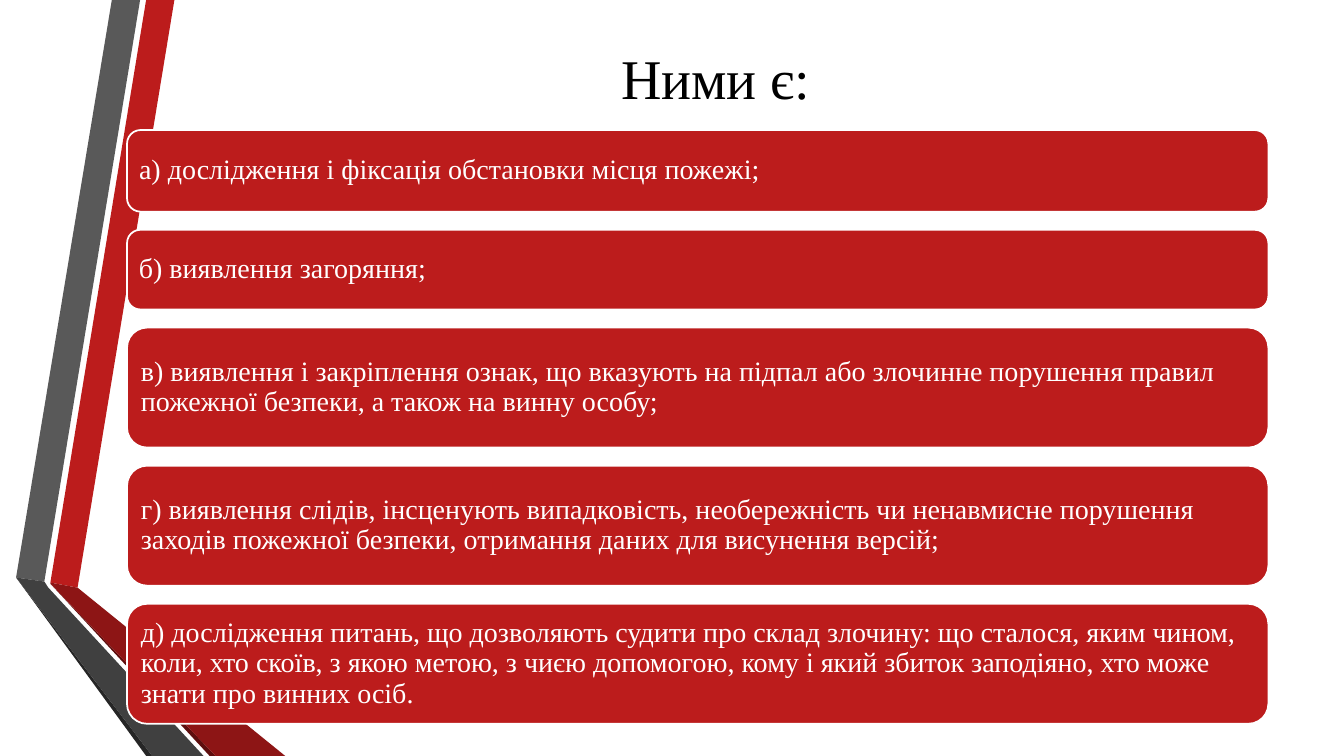
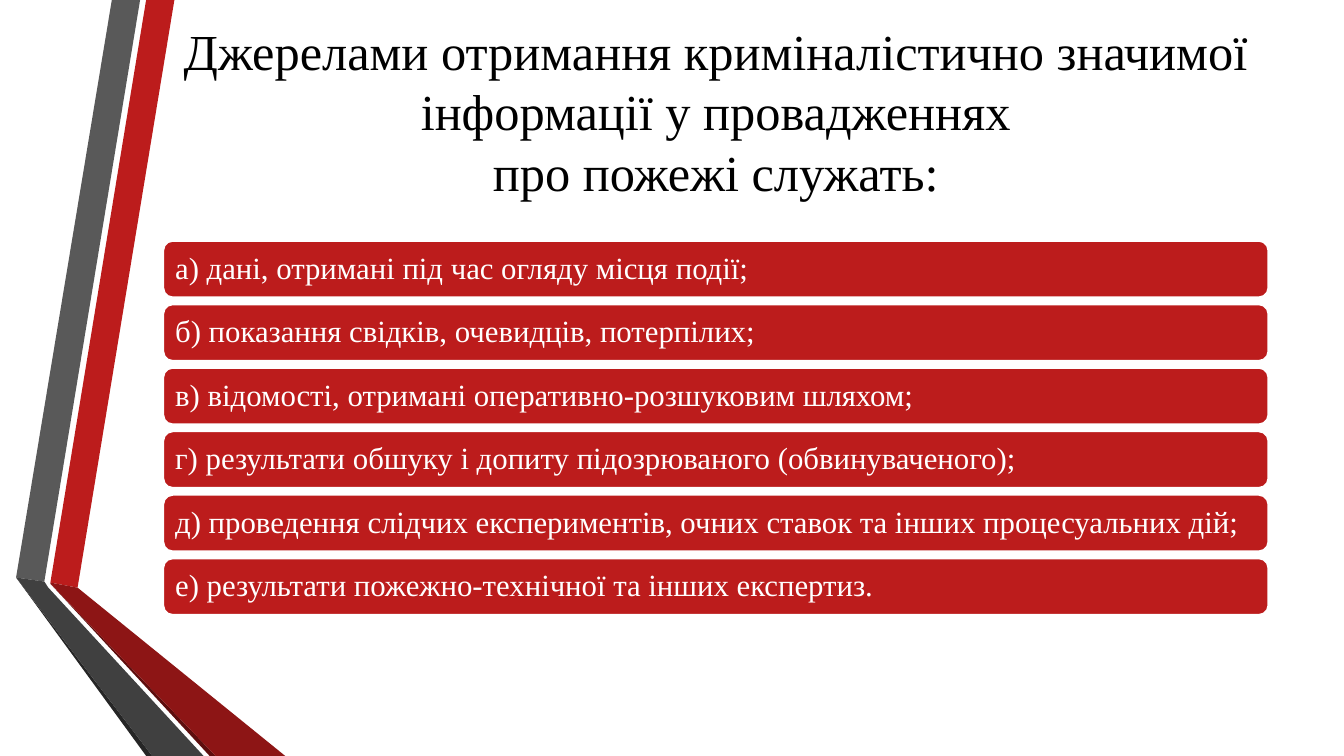
from pptx import Presentation
from pptx.dml.color import RGBColor
from pptx.enum.shapes import MSO_SHAPE as Preset
from pptx.enum.text import MSO_ANCHOR as Anchor, PP_ALIGN as Align
from pptx.util import Inches, Pt

FONT = "Times New Roman"
RED, WHITE, BLACK = "BC1C1C", "FFFFFF", "000000"
RIGHT_EDGE = 12.58
TITLE_LEFT = 1.62

RIBBONS = [
    (RED, [(0.5, 5.78), (0.77, 5.83), (1.73, 0), (1.45, 0)]),
    ("595959", [(1.39, 0), (1.11, 0), (0.16, 5.73), (0.44, 5.77)]),
    ("262626", [(0.16, 5.73), (1.45, 7.5), (1.51, 7.5)]),
    ("5E0E0E", [(0.5, 5.79), (2.08, 7.5), (2.14, 7.5)]),
    ("8D1515", [(0.5, 5.79), (2.14, 7.5), (2.83, 7.5), (0.77, 5.83), (0.5, 5.78)]),
    ("404040", [(2.02, 7.5), (0.48, 5.83), (0.44, 5.77), (0.16, 5.73), (1.51, 7.5)]),
]

SLIDES = [
    {
        "title": "Ними є:",
        "title_size": 40,
        "title_top": 0.14,
        "title_height": 1.25,
        "left": 1.26,
        "top": 1.29,
        "gap": 0.18,
        "size": 20,
        "inset": 0.08,
        "items": [
            ("а) дослідження і фіксація обстановки місця пожежі;", 0.81),
            ("б) виявлення загоряння;", 0.79),
            ("в) виявлення і закріплення ознак, що вказують на підпал або злочинне "
             "порушення правил пожежної безпеки, а також на винну особу;", 1.19),
            ("г) виявлення слідів, інсценують випадковість, необережність чи ненавмисне "
             "порушення заходів пожежної безпеки, отримання даних для висунення версій;", 1.19),
            ("д) дослідження питань, що дозволяють судити про склад злочину: що сталося, "
             "яким чином, коли, хто скоїв, з якою метою, з чиєю допомогою, кому і який "
             "збиток заподіяно, хто може знати про винних осіб.", 1.19),
        ],
    },
    {
        "title": "Джерелами отримання криміналістично значимої інформації у провадженнях\n"
                 "про пожежі служать:",
        "title_size": 36,
        "title_top": 0.17,
        "title_height": 1.85,
        "left": 1.62,
        "top": 2.39,
        "gap": 0.07,
        "size": 22,
        "inset": 0.09,
        "items": [
            ("а) дані, отримані під час огляду місця події;", 0.56),
            ("б) показання свідків, очевидців, потерпілих;", 0.56),
            ("в) відомості, отримані оперативно-розшуковим шляхом;", 0.56),
            ("г) результати обшуку і допиту підозрюваного (обвинуваченого);", 0.56),
            ("д) проведення слідчих експериментів, очних ставок та інших процесуальних дій;", 0.56),
            ("е) результати пожежно-технічної та інших експертиз.", 0.56),
        ],
    },
]


def color(hex_string):
    """Turn a hex string into a colour."""
    return RGBColor.from_string(hex_string)


def apply_format(target, values):
    """Set each attribute of the target from a dict."""
    for name, value in values.items():
        setattr(target, name, value)


def fill_shape(shape, fill):
    """Give a shape a plain fill and no shadow."""
    shape.shadow.inherit = False
    shape.fill.solid()
    shape.fill.fore_color.rgb = color(fill)


def write_text(shape, text, size, text_color, frame_format, paragraph_format):
    """Write formatted paragraphs into a shape."""
    frame = shape.text_frame
    frame.text = text
    apply_format(frame, {"word_wrap": True, "vertical_anchor": Anchor.MIDDLE, **frame_format})
    for paragraph in frame.paragraphs:
        apply_format(paragraph, paragraph_format)
        for run in paragraph.runs:
            apply_format(run.font, {"name": FONT, "size": Pt(size)})
            run.font.color.rgb = color(text_color)


def add_ribbon(slide, fill, points):
    """Draw one closed piece of the side ribbon."""
    corners = [(Inches(x), Inches(y)) for x, y in points]
    builder = slide.shapes.build_freeform(*corners[0], scale=1.0)
    builder.add_line_segments(corners[1:], close=True)
    shape = builder.convert_to_shape()
    fill_shape(shape, fill)
    shape.line.fill.background()


def add_title(slide, text, size, top, height):
    """Add the centred slide title."""
    box = slide.shapes.add_textbox(
        Inches(TITLE_LEFT), Inches(top), Inches(RIGHT_EDGE - TITLE_LEFT), Inches(height))
    write_text(box, text, size, BLACK, {}, {"alignment": Align.CENTER})


def add_card(slide, text, left, top, height, size, inset):
    """Add one rounded list card."""
    card = slide.shapes.add_shape(
        Preset.ROUNDED_RECTANGLE,
        Inches(left), Inches(top), Inches(RIGHT_EDGE - left), Inches(height))
    fill_shape(card, RED)
    card.line.color.rgb = color(WHITE)
    card.line.width = Pt(1.25)
    sides = ("left", "top", "right", "bottom")
    margins = {f"margin_{side}": Inches(inset) for side in sides}
    write_text(card, text, size, WHITE, margins,
               {"alignment": Align.LEFT, "line_spacing": 0.9})


def add_list_slide(presentation, content):
    """Add a slide with ribbon, title and stacked cards."""
    slide = presentation.slides.add_slide(presentation.slide_layouts[6])
    for fill, points in RIBBONS:
        add_ribbon(slide, fill, points)
    add_title(slide, content["title"], content["title_size"],
              content["title_top"], content["title_height"])
    top = content["top"]
    for text, height in content["items"]:
        add_card(slide, text, content["left"], top, height, content["size"], content["inset"])
        top += height + content["gap"]


def main():
    """Build and save the presentation."""
    presentation = Presentation()
    apply_format(presentation, {"slide_width": Inches(13.33), "slide_height": Inches(7.5)})
    for content in SLIDES:
        add_list_slide(presentation, content)
    presentation.save("out.pptx")


if __name__ == "__main__":
    main()
